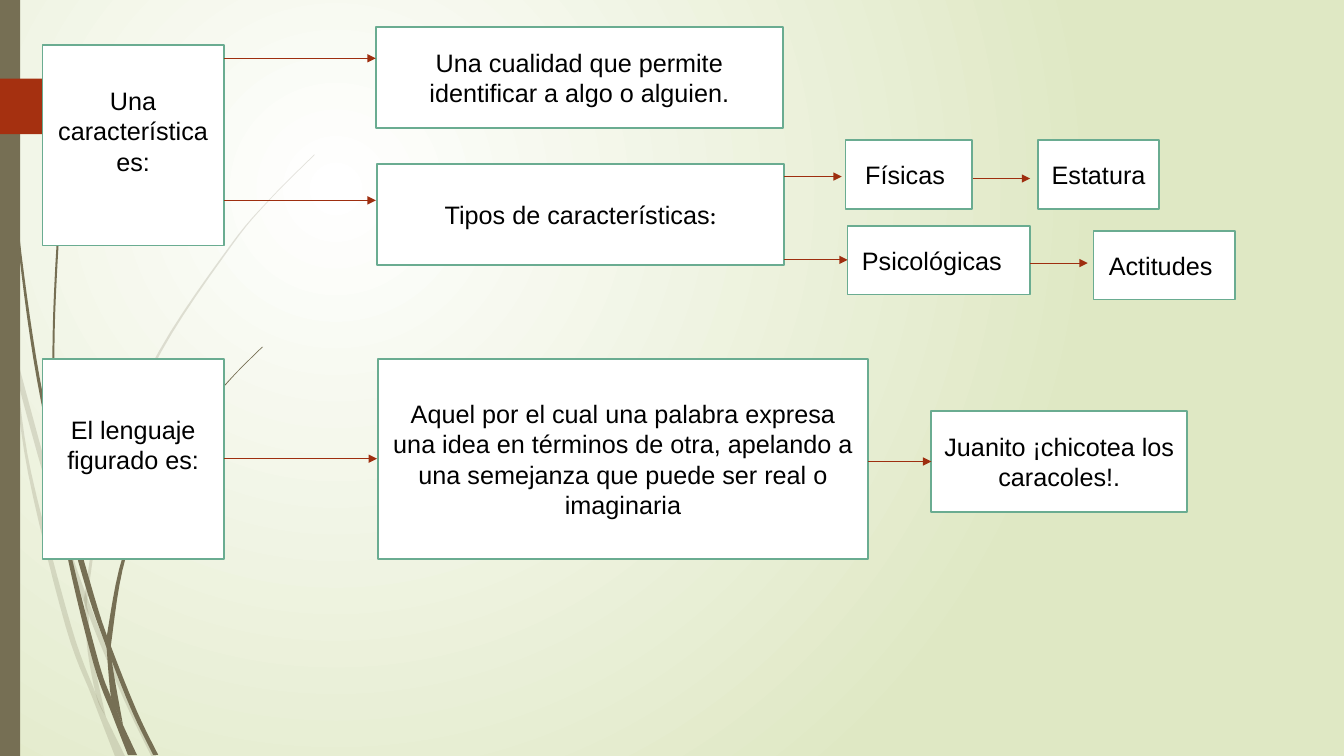
from lxml.etree import SubElement
from pptx import Presentation
from pptx.dml.color import RGBColor
from pptx.enum.shapes import MSO_CONNECTOR, MSO_SHAPE
from pptx.enum.text import MSO_ANCHOR, PP_ALIGN
from pptx.oxml.ns import qn
from pptx.util import Cm, Pt

OLIVE, RUST, ARROW, TEAL, WHITE, BLACK = "766F54", "A53010", "9E2E0F", "6AAC91", "FFFFFF", "000000"
FRAME = {"word_wrap": True, "vertical_anchor": MSO_ANCHOR.MIDDLE}
FONT = {"name": "Arial", "size": Pt(18)}
TALL = {"margin_bottom": Cm(0.86)}

PALE_STRANDS = [
    ([(0, 2.82), (0.09, 3.22), (0.17, 3.76), (0.31, 4.69), (0.7, 6.19), (0.93, 6.83), (1.05, 7.11), (1.24, 7.5)],
     [(0, 2.99), (0.11, 3.5), (0.28, 4.7), (0.65, 6.21), (0.92, 6.93), (1.14, 7.5)]),
    ([(0.14, 3.45), (0.62, 5.2), (0.92, 6.07), (1.27, 6.92), (1.55, 7.5)],
     [(0.14, 3.45), (0.17, 3.76), (0.58, 5.22), (0.88, 6.1), (1.23, 6.94), (1.5, 7.5)]),
    ([(3.12, 1.54), (2.68, 1.98), (2.29, 2.45), (1.6, 3.49), (1.1, 4.62), (0.88, 5.84), (0.88, 6.1),
      (0.91, 6.46), (1.05, 7.11)],
     [(3.12, 1.53), (2.68, 1.97), (2.28, 2.44), (1.58, 3.48), (1.07, 4.61), (0.85, 5.84), (0.84, 5.99),
      (0.87, 6.46), (0.96, 6.92), (1.05, 7.11)]),
]
DARK_STRANDS = [
    ([(0.04, 0), (0.08, 1.09), (0.19, 2.32), (0.36, 3.55), (0.55, 4.53), (0.64, 5.05), (0.72, 5.56),
      (0.98, 6.57), (1.1, 6.91), (1.22, 7.19), (1.36, 7.49)],
     [(0.03, 0), (0.07, 1.1), (0.17, 2.33), (0.33, 3.55), (0.56, 4.77), (0.68, 5.57), (0.93, 6.59),
      (1.11, 7.08), (1.27, 7.49)]),
    ([(0.7, 1.41), (0.63, 1.93), (0.58, 2.45), (0.54, 3.49), (0.58, 4.53), (0.6, 4.72), (0.93, 5.9),
      (1.1, 6.41), (1.36, 7.06), (1.57, 7.49)],
     [(0.7, 1.41), (0.62, 1.93), (0.56, 2.45), (0.52, 3.49), (0.55, 4.49), (0.64, 5.05), (0.88, 5.92),
      (1.11, 6.56), (1.32, 7.08), (1.52, 7.49)]),
    ([(2.61, 3.44), (2.31, 3.74), (2.05, 4.06), (1.58, 4.76), (1.25, 5.52), (1.11, 6.33), (1.11, 6.56),
      (1.22, 7.19)],
     [(2.6, 3.44), (2.31, 3.73), (2.04, 4.05), (1.56, 4.74), (1.22, 5.51), (1.06, 6.31), (1.06, 6.45),
      (1.1, 6.91), (1.16, 7.06), (1.22, 7.19)]),
]


def rgb(code):
    """Turn a hex string into a colour."""
    return RGBColor.from_string(code)


def set_all(target, values):
    """Set every attribute in the dict on the target."""
    for name, value in values.items():
        setattr(target, name, value)


def paint(sp, fill, line=None):
    """Give a shape its flat fill and outline."""
    sp.shadow.inherit = False
    sp.fill.solid()
    sp.fill.fore_color.rgb = rgb(fill)
    if line:
        sp.line.color.rgb = rgb(line)
        sp.line.width = Pt(1.25)
    else:
        sp.line.fill.background()


def smooth(pts, steps=6):
    """Return a Catmull-Rom curve through the points."""
    ext = [pts[0], *pts, pts[-1]]
    curve = [pts[0]]
    for a, b, c, d in zip(ext, ext[1:], ext[2:], ext[3:]):
        for i in range(1, steps + 1):
            t = i / steps
            curve.append(tuple(
                (2 * q + (r - p) * t + (2 * p - 5 * q + 4 * r - u) * t ** 2
                 + (3 * q - p - 3 * r + u) * t ** 3) / 2
                for p, q, r, u in zip(a, b, c, d)))
    return curve


def strands(s, outlines, unit, alpha=None):
    """Draw grass strands, each between a right and a left edge."""
    for right, left in outlines:
        pts = [(x * unit, y * unit) for x, y in smooth(right) + smooth(left)[::-1]]
        fb = s.shapes.build_freeform(*pts[0])
        fb.add_line_segments(pts[1:], close=True)
        sp = fb.convert_to_shape()
        paint(sp, OLIVE)
        if alpha:
            clr = sp.element.spPr.find(".//" + qn("a:srgbClr"))
            SubElement(clr, qn("a:alpha"), val=str(alpha * 1000))


def backdrop(s, w, h):
    """Fill the slide with the radial gradient, strands, side bar and tag."""
    fill = s.background.fill
    fill.gradient()
    for stop, code in zip(fill.gradient_stops, (WHITE, "DFE8C4")):
        stop.color.rgb = rgb(code)
    grad = s.element.find(".//" + qn("a:gradFill"))
    grad.remove(grad.find(qn("a:lin")))
    radial = SubElement(grad, qn("a:path"), path="circle")
    SubElement(radial, qn("a:fillToRect"), l="50000", t="50000", r="100000", b="100000")
    unit = h / 7.5
    strands(s, PALE_STRANDS, unit, 20)
    strands(s, DARK_STRANDS, unit)
    paint(s.shapes.add_shape(MSO_SHAPE.RECTANGLE, 0, 0, Cm(0.51), h), OLIVE)
    paint(s.shapes.add_shape(MSO_SHAPE.PENTAGON, 0, Cm(1.98), Cm(4.42), Cm(1.4)), RUST)


def card(s, x, y, w, h, runs, insets):
    """Add a white box with centred text given as (text, font) runs."""
    sp = s.shapes.add_shape(MSO_SHAPE.RECTANGLE, x, y, w, h)
    paint(sp, WHITE, TEAL)
    tf = sp.text_frame
    set_all(tf, FRAME | insets)
    p = tf.paragraphs[0]
    p.alignment = PP_ALIGN.CENTER
    for text, font in runs:
        r = p.add_run()
        r.text = text
        set_all(r.font, FONT | font)
        r.font.color.rgb = rgb(BLACK)


def arrow(s, x1, x2, y):
    """Add a level arrow from x1 to x2."""
    ln = s.shapes.add_connector(MSO_CONNECTOR.STRAIGHT, x1, y, x2, y)
    ln.line.color.rgb = rgb(ARROW)
    ln.line.width = Pt(0.75)
    SubElement(ln.line._get_or_add_ln(), qn("a:tailEnd"), type="triangle")
    SubElement(ln.element.spPr, qn("a:effectLst"))


def concept_map(s, left, top, cards, arrows):
    """Place cards and arrows relative to the region's corner."""
    for x, y, w, h, runs, insets in cards:
        card(s, left + Cm(x), top + Cm(y), Cm(w), Cm(h), runs, insets)
    for x1, x2, y in arrows:
        arrow(s, left + Cm(x1), left + Cm(x2), top + Cm(y))


def features(s, left, top):
    """Build the map of what a characteristic is."""
    cards = [
        (0, 0.45, 4.57, 5.05, [("Una característica es:", {})], TALL),
        (8.4, 0, 10.26, 2.54, [("Una cualidad que permite identificar a algo o alguien.", {})], {}),
        (8.43, 3.45, 10.26, 2.54,
         [("Tipos de características", {}), (":", {"name": "League Spartan"})], {}),
        (20.24, 2.84, 3.18, 1.73, [("Físicas", {})], {"margin_right": Cm(0.43)}),
        (20.29, 5, 4.6, 1.73, [("Psicológicas", {})], {"margin_right": Cm(0.6)}),
        (25.09, 2.84, 3.05, 1.73, [("Estatura", {})], {}),
        (26.49, 5.13, 3.56, 1.73, [("Actitudes", {})], {"margin_right": Cm(0.43)}),
    ]
    arrows = [(4.57, 8.4, 0.78), (4.57, 8.4, 4.36), (18.69, 20.14, 3.76), (18.69, 20.29, 5.86),
              (23.44, 24.89, 3.81), (24.89, 26.34, 5.94)]
    concept_map(s, left, top, cards, arrows)


def figurative(s, left, top):
    """Build the map of figurative language."""
    cards = [
        (0, 0, 4.57, 5.05, [("El lenguaje figurado es:", {})], TALL),
        (8.46, 0, 12.34, 5.05,
         [("Aquel por el cual una palabra expresa una idea en términos de otra, "
           "apelando a una semejanza que puede ser real o imaginaria", {})], {}),
        (22.4, 1.32, 6.45, 2.54, [("Juanito ¡chicotea los caracoles!.", {})], {}),
    ]
    concept_map(s, left, top, cards, [(4.57, 8.43, 2.52), (20.8, 22.4, 2.59)])


def main():
    """Build and save the slide."""
    prs = Presentation()
    set_all(prs, {"slide_width": Cm(33.87), "slide_height": Cm(19.05)})
    s = prs.slides.add_slide(prs.slide_layouts[6])
    backdrop(s, prs.slide_width, prs.slide_height)
    features(s, Cm(1.07), Cm(0.69))
    figurative(s, Cm(1.07), Cm(9.04))
    prs.save("out.pptx")


if __name__ == "__main__":
    main()
